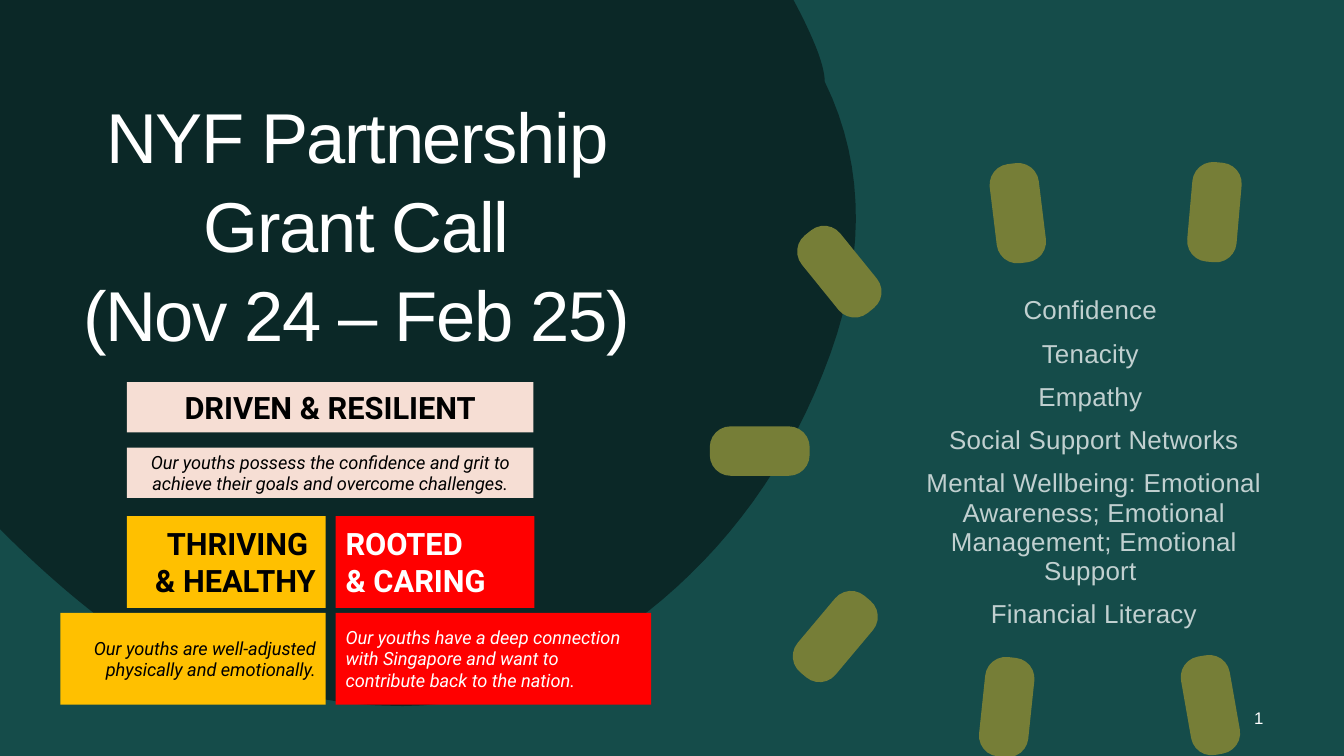
"""Build the grant call title slide."""
from dataclasses import dataclass
from pptx import Presentation
from pptx.dml.color import RGBColor
from pptx.enum.shapes import MSO_SHAPE
from pptx.enum.text import MSO_ANCHOR, PP_ALIGN
from pptx.shapes.base import BaseShape
from pptx.slide import Slide
from pptx.util import Emu, Pt

PX = 9144
WIDE, HIGH = 1333, 750
STEPS = 16
HEX = {"dark": "0B2827", "teal": "154C4A", "olive": "767E37", "gold": "FFC000",
       "red": "FF0000", "pink": "F6DED4", "white": "FFFFFF", "black": "000000",
       "mist": "C1D0D0"}
LEFT, MID, RIGHT = PP_ALIGN.LEFT, PP_ALIGN.CENTER, PP_ALIGN.RIGHT
Path = list[tuple[int, ...]]
Box = tuple[int, int, int, int]


@dataclass
class Style:
    size: float
    color: str
    align: PP_ALIGN
    font: str = "Arial"
    bold: bool = False
    slant: bool = False
    track: int = 0
    line: float = 1.0
    before: int = 0


@dataclass
class Petal:
    x: int
    y: int
    turn: int


@dataclass
class Card:
    box: Box
    fill: str
    ink: str
    align: PP_ALIGN
    text: str
    head: bool


@dataclass
class Label:
    box: Box
    text: str
    style: Style
    pad: int = 0


BLOB: Path = [
    (0, 0), (787, 0), (802, 28, 818, 62, 818, 81), (860, 167, 859, 264, 816, 371),
    (773, 479, 706, 560, 629, 617), (575, 665, 480, 705, 381, 700),
    (323, 699, 246, 679, 142, 644), (95, 612, 50, 575, 0, 525)]

THIN, LONG = 49, 99
PETALS = [Petal(1200, 699, -10), Petal(753, 447, 90), Petal(1204, 210, 5),
          Petal(1009, 211, -7), Petal(828, 631, 40), Petal(998, 701, 6),
          Petal(832, 269, -39)]

CARDS = [
    Card((126, 512, 197, 91), "gold", "black", RIGHT, "THRIVING \n& HEALTHY", True),
    Card((60, 608, 263, 91), "gold", "black", RIGHT,
         "Our youths are well-adjusted physically and emotionally.", False),
    Card((333, 512, 197, 91), "red", "white", LEFT, "ROOTED\n& CARING", True),
    Card((333, 608, 313, 91), "red", "white", LEFT,
         "Our youths have a deep connection with Singapore and want to "
         "contribute back to the nation.", False),
    Card((126, 379, 403, 50), "pink", "black", MID, "DRIVEN & RESILIENT", True),
    Card((126, 444, 403, 50), "pink", "black", MID,
         "Our youths possess the confidence and grit to achieve their goals "
         "and overcome challenges.", False)]

TRAITS = ["Confidence ", "Tenacity ", "Empathy ", "Social Support Networks",
          "Mental Wellbeing: Emotional Awareness; Emotional Management; Emotional Support ",
          "Financial Literacy"]

LABELS = [
    Label((79, 79, 549, 283), "NYF Partnership Grant Call\v(Nov 24 – Feb 25)",
          Style(50.4, "white", MID, track=-100, line=1.05)),
    Label((915, 288, 340, 343), "\n".join(TRAITS),
          Style(18.5, "mist", MID, track=20, line=0.94, before=10)),
    Label((1123, 671, 130, 79), "1", Style(12, "white", RIGHT, track=20, line=1.2), 20)]


def tint(name: str) -> RGBColor:
    return RGBColor.from_string(HEX[name])


def paint(shape: BaseShape, fill: str) -> None:
    shape.shadow.inherit = False
    shape.fill.solid()
    shape.fill.fore_color.rgb = tint(fill)
    shape.line.fill.background()


def write(shape: BaseShape, text: str, style: Style) -> None:
    frame = shape.text_frame
    frame.text = text
    frame.word_wrap = True
    frame.vertical_anchor = MSO_ANCHOR.MIDDLE
    for para in frame.paragraphs:
        para.alignment = style.align
        para.line_spacing = style.line
        para.space_before = Pt(style.before)
        for run in para.runs:
            font = run.font
            font.name, font.size = style.font, Pt(style.size)
            font.bold, font.italic = style.bold, style.slant
            font.color.rgb = tint(style.color)
            run._r.get_or_add_rPr().set("spc", str(style.track))


def trace(path: Path) -> list[tuple[float, float]]:
    dots = [path[0]]
    for part in path[1:]:
        if len(part) == 2:
            dots.append(part)
            continue
        ends = [dots[-1], part[:2], part[2:4], part[4:]]
        for step in range(1, STEPS + 1):
            t = step / STEPS
            mix = ((1 - t) ** 3, 3 * t * (1 - t) ** 2, 3 * t * t * (1 - t), t ** 3)
            dots.append(tuple(sum(m * e[i] for m, e in zip(mix, ends)) for i in (0, 1)))
    return [(x * PX, y * PX) for x, y in dots]


def draw(slide: Slide, path: Path, fill: str) -> None:
    first, *rest = trace(path)
    pen = slide.shapes.build_freeform(*first, scale=1.0)
    pen.add_line_segments(rest, close=True)
    paint(pen.convert_to_shape(), fill)


def block(slide: Slide, box: Box, fill: str,
          kind: MSO_SHAPE = MSO_SHAPE.RECTANGLE) -> BaseShape:
    shape = slide.shapes.add_shape(kind, *(Emu(n * PX) for n in box))
    paint(shape, fill)
    return shape


def sprout(slide: Slide, petal: Petal) -> None:
    box = (petal.x - THIN // 2, petal.y - LONG // 2, THIN, LONG)
    shape = block(slide, box, "olive", MSO_SHAPE.ROUNDED_RECTANGLE)
    shape.adjustments[0] = 0.42
    shape.rotation = petal.turn


def place(slide: Slide, label: Label) -> None:
    shape = slide.shapes.add_textbox(*(Emu(n * PX) for n in label.box))
    write(shape, label.text, label.style)
    frame = shape.text_frame
    frame.margin_left = frame.margin_right = 0
    frame.margin_top = frame.margin_bottom = Emu(label.pad * PX)


def main() -> None:
    deck = Presentation()
    deck.slide_width, deck.slide_height = Emu(WIDE * PX), Emu(HIGH * PX)
    slide = deck.slides.add_slide(deck.slide_layouts[6])
    slide.background.fill.solid()
    slide.background.fill.fore_color.rgb = tint("dark")
    block(slide, (0, 0, WIDE, HIGH), "teal")
    draw(slide, BLOB, "dark")
    for petal in PETALS:
        sprout(slide, petal)
    for card in CARDS:
        style = Style(22 if card.head else 13, card.ink, card.align, "Roboto",
                      bold=card.head, slant=not card.head)
        write(block(slide, card.box, card.fill), card.text, style)
    for label in LABELS:
        place(slide, label)
    deck.save("out.pptx")


if __name__ == "__main__":
    main()
